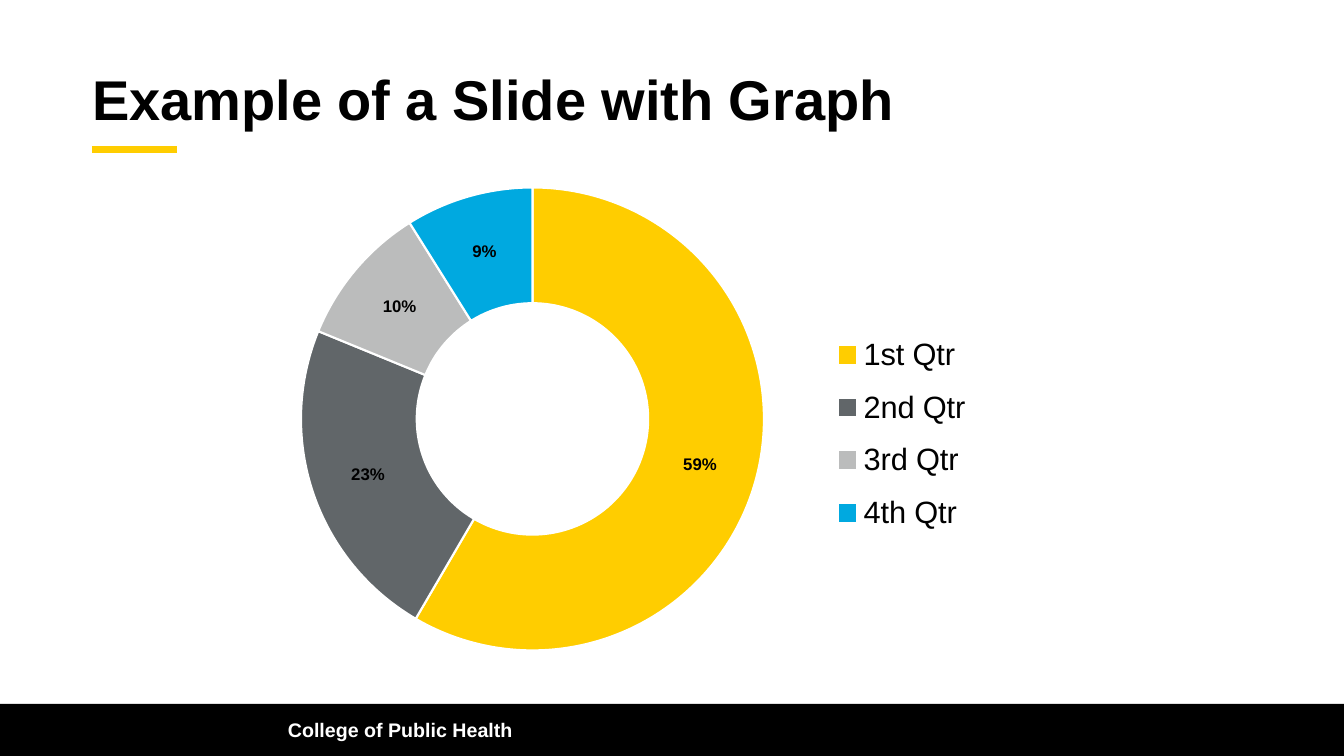
from lxml import etree
from pptx import Presentation
from pptx.chart.data import CategoryChartData
from pptx.dml.color import RGBColor
from pptx.enum.chart import XL_CHART_TYPE, XL_LEGEND_POSITION
from pptx.enum.shapes import MSO_CONNECTOR, MSO_SHAPE
from pptx.enum.text import MSO_ANCHOR, MSO_AUTO_SIZE, PP_ALIGN
from pptx.oxml import parse_xml
from pptx.oxml.ns import nsdecls, qn
from pptx.util import Emu, Pt

DOUGHNUT = XL_CHART_TYPE.DOUGHNUT
LEGEND_RIGHT = XL_LEGEND_POSITION.RIGHT
STRAIGHT = MSO_CONNECTOR.STRAIGHT
RECTANGLE = MSO_SHAPE.RECTANGLE
MIDDLE = MSO_ANCHOR.MIDDLE
NO_AUTOFIT = MSO_AUTO_SIZE.NONE
LEFT = PP_ALIGN.LEFT

BLACK, WHITE, GOLD = "000000", "FFFFFF", "FFCD00"
QUARTERS = [
    ("1st Qtr", 59, GOLD),
    ("2nd Qtr", 23, "616669"),
    ("3rd Qtr", 10, "BBBCBC"),
    ("4th Qtr", 9, "00A9E0"),
]


def px(*lengths):
    """Turn pixel lengths into EMU."""
    return [Emu(round(n * 12192000 / 1344)) for n in lengths]


def rgb(color):
    """Turn a hex string into a colour."""
    return RGBColor.from_string(color)


def set_font(font, size, color, bold=False):
    """Format a font."""
    values = {"name": "Arial", "size": Pt(size), "bold": bold}
    for key, value in values.items():
        setattr(font, key, value)
    font.color.rgb = rgb(color)


def write_text(sp, text, size, color, spacing=1.0):
    """Write one bold, left-aligned line in a shape."""
    tf = sp.text_frame
    values = {"word_wrap": True, "auto_size": NO_AUTOFIT, "vertical_anchor": MIDDLE}
    for key, value in values.items():
        setattr(tf, key, value)
    p = tf.paragraphs[0]
    p.alignment, p.line_spacing = LEFT, spacing
    r = p.add_run()
    r.text = text
    set_font(r.font, size, color, True)


def add_title(s, text, box):
    """Place and fill the title placeholder."""
    sp = s.shapes.title
    sp.left, sp.top, sp.width, sp.height = px(*box)
    write_text(sp, text, 40, BLACK, 0.9)


def add_footer(s, text, bar_box, text_box):
    """Draw the footer bar and its label."""
    sp = s.shapes.add_shape(RECTANGLE, *px(*bar_box))
    sp.shadow.inherit = False
    sp.fill.solid()
    sp.fill.fore_color.rgb = rgb(BLACK)
    sp.line.fill.background()
    write_text(s.shapes.add_textbox(*px(*text_box)), text, 14, WHITE)


def add_rule(s, ends, color, width):
    """Draw a straight line without shadow."""
    line = s.shapes.add_connector(STRAIGHT, *px(*ends))
    line.line.color.rgb = rgb(color)
    line.line.width = Pt(width)
    etree.SubElement(line._element.spPr, qn("a:effectLst"))


def set_layout(parent, index, box, frame, inner=False):
    """Fix a chart part at a pixel box inside the chart frame."""
    for old in parent.findall(qn("c:layout")):
        parent.remove(old)
    left, top, width, height = frame
    x, y, w, h = box
    parts = {"x": (x - left) / width, "y": (y - top) / height,
             "w": w / width, "h": h / height}
    target = '<c:layoutTarget val="inner"/>' if inner else ""
    modes = '<c:xMode val="edge"/><c:yMode val="edge"/>'
    sizes = "".join(f'<c:{k} val="{v:.4f}"/>' for k, v in parts.items())
    parent.insert(index, parse_xml(
        f'<c:layout {nsdecls("c")}><c:manualLayout>{target}{modes}{sizes}'
        "</c:manualLayout></c:layout>"))


def add_doughnut(s, frame, ring_box, legend_box):
    """Draw the doughnut chart of the quarters."""
    data = CategoryChartData()
    data.categories = [name for name, _, _ in QUARTERS]
    data.add_series("Series 1", [value for _, value, _ in QUARTERS])
    chart = s.shapes.add_chart(DOUGHNUT, *px(*frame), data).chart
    chart.has_title = False
    set_font(chart.font, 10, BLACK)

    chart.has_legend = True
    legend = chart.legend
    legend.position, legend.include_in_layout = LEGEND_RIGHT, False
    set_font(legend.font, 22, BLACK)
    set_layout(legend._element, 1, legend_box, frame)

    plot = chart.plots[0]
    plot.vary_by_categories = True
    set_layout(chart._chartSpace.chart.plotArea, 0, ring_box, frame, True)
    series = plot.series[0]
    for i, (_, _, color) in enumerate(QUARTERS):
        fmt = series.points[i].format
        fmt.fill.solid()
        fmt.fill.fore_color.rgb = rgb(color)
        fmt.line.color.rgb = rgb(WHITE)
        fmt.line.width = Pt(1.5)

    labels = series.data_labels
    values = {"show_value": True, "show_percentage": False,
              "number_format": '0"%"', "number_format_is_linked": False}
    for key, value in values.items():
        setattr(labels, key, value)
    set_font(labels.font, 12, BLACK, True)


def main():
    """Build and save the slide."""
    prs = Presentation()
    prs.slide_width, prs.slide_height = px(1344, 756)
    s = prs.slides.add_slide(prs.slide_layouts[5])
    add_footer(s, "College of Public Health", (0, 704, 1344, 52), (278, 710, 958, 40))
    add_rule(s, (92, 150, 177, 150), GOLD, 5)
    add_title(s, "Example of a Slide with Graph", (82, 54, 1159, 96))
    add_doughnut(s, (82, 173, 1057, 493), (301, 187, 463, 464), (828, 319, 148, 230))
    prs.save("out.pptx")


if __name__ == "__main__":
    main()
